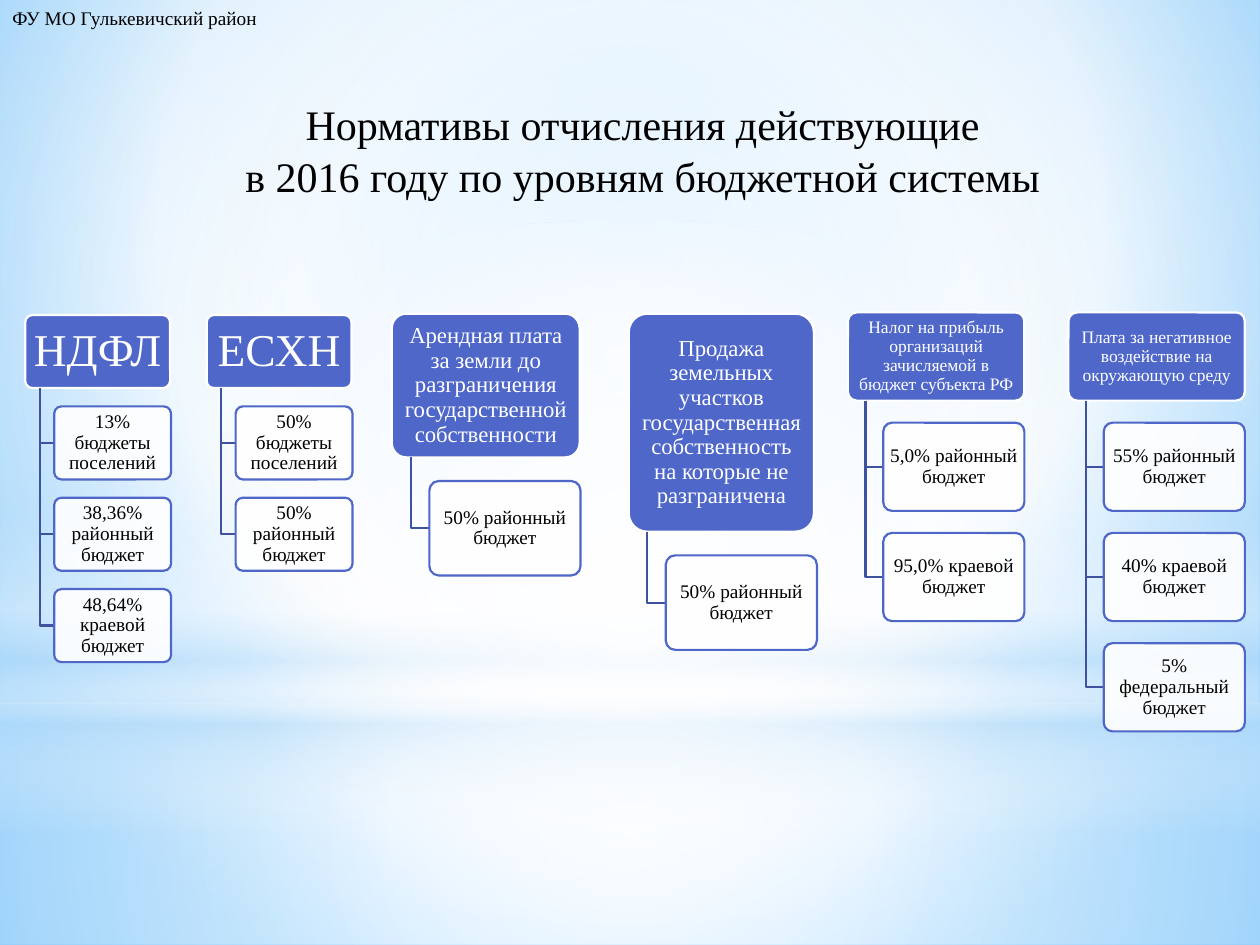
from lxml import etree
from pptx import Presentation
from pptx import util as u
from pptx.dml.color import RGBColor
from pptx.enum import shapes, text
from pptx.oxml.ns import qn

WHITE = RGBColor(0xFF, 0xFF, 0xFF)
BLACK = RGBColor(0x00, 0x00, 0x00)
INDIGO = RGBColor(0x4E, 0x67, 0xC8)
STEM_BLUE = RGBColor(0x3E, 0x52, 0xA0)
SKY = RGBColor(0x9E, 0xD5, 0xFF)
DEEP_SKY = RGBColor(0x5B, 0xB9, 0xFF)
PALE_SKY = RGBColor(0xB4, 0xDC, 0xFA)
FONT = "Times New Roman"
COLUMNS, ROWS = 100, 75
CENTRE = (50, 50, 50, 50)

# left, top, head width, head height, leaf height, head size, head, leaves
TAXES = [
    (2, 25, 11.5, 5.8, 5.8, 26, "НДФЛ",
     ["13% бюджеты поселений", "38,36% районный бюджет", "48,64% краевой бюджет"]),
    (16.4, 25, 11.5, 5.8, 5.8, 26, "ЕСХН",
     ["50% бюджеты поселений", "50% районный бюджет"]),
    (31.1, 24.9, 14.9, 11.4, 7.5, 13,
     "Арендная плата за земли до разграничения государственной собственности",
     ["50% районный бюджет"]),
    (49.9, 24.9, 14.7, 17.3, 7.5, 13,
     "Продажа земельных участков государственная собственность на которые не разграничена",
     ["50% районный бюджет"]),
    (67.3, 24.8, 14, 7, 7, 10,
     "Налог на прибыль организаций зачисляемой в бюджет субъекта РФ",
     ["5,0% районный бюджет", "95,0% краевой бюджет"]),
    (84.8, 24.8, 14, 7, 7, 10,
     "Плата за негативное воздействие на окружающую среду",
     ["55% районный бюджет", "40% краевой бюджет", "5% федеральный бюджет"]),
]


def cells(count):
    """Length of a number of grid cells, each a tenth of an inch."""
    return u.Inches(count / 10)


def box_of(left, top, width, height):
    return [cells(side) for side in (left, top, width, height)]


def set_alpha(colour, percent):
    etree.SubElement(colour, qn("a:alpha"), val=str(percent * 1000))


def set_gradient(fill, owner, stops, centre=None):
    """Fill with (position, colour, opacity) stops: round a centre, or downwards."""
    fill.solid()
    solid = next(owner.iter(qn("a:solidFill")))
    gradient = etree.Element(qn("a:gradFill"), rotWithShape="1")
    stop_list = etree.SubElement(gradient, qn("a:gsLst"))
    for position, colour, opacity in stops:
        stop = etree.SubElement(stop_list, qn("a:gs"), pos=str(position * 1000))
        set_alpha(etree.SubElement(stop, qn("a:srgbClr"), val=str(colour)), opacity)
    if centre:
        round_path = etree.SubElement(gradient, qn("a:path"), {"path": "circle"})
        edges = {edge: str(share * 1000) for edge, share in zip("ltrb", centre)}
        etree.SubElement(round_path, qn("a:fillToRect"), edges)
    else:
        etree.SubElement(gradient, qn("a:lin"), ang="5400000", scaled="0")
    solid.getparent().replace(solid, gradient)


def add_glow(slide, kind, box, stops, centre=None):
    glow = slide.shapes.add_shape(kind, *box_of(*box))
    glow.shadow.inherit = False
    glow.line.fill.background()
    set_gradient(glow.fill, glow._element.spPr, stops, centre)


def add_backdrop(slide):
    background = slide.background
    set_gradient(background.fill, slide._element,
                 [(0, SKY, 100), (60, WHITE, 100), (100, DEEP_SKY, 100)], (20, 10, 20, 60))
    rectangle, oval = shapes.MSO_SHAPE.RECTANGLE, shapes.MSO_SHAPE.OVAL
    horizon = 55.8
    add_glow(slide, rectangle, (0, horizon, COLUMNS, ROWS - horizon),
             [(0, WHITE, 91), (37, WHITE, 76), (100, PALE_SKY, 79)], CENTRE)
    add_glow(slide, rectangle, (0, 0, COLUMNS, horizon),
             [(0, WHITE, 89), (48, WHITE, 62), (100, PALE_SKY, 79)], CENTRE)
    add_glow(slide, rectangle, (0, 41.2, COLUMNS, 25),
             [(0, WHITE, 0), (29, WHITE, 30), (45, PALE_SKY, 40),
              (55, WHITE, 26), (65, PALE_SKY, 60), (100, WHITE, 0)])
    add_glow(slide, oval, (0, 17.5, COLUMNS, 55.8),
             [(0, WHITE, 100), (56, WHITE, 0)], CENTRE)


def write(paragraph, words, size, colour):
    run = paragraph.add_run()
    run.text = words
    run.font.size = u.Pt(size)
    run.font.name = FONT
    run.font.color.rgb = colour


def add_card(slide, box, words, size, colours, margins):
    """Rounded card; colours are fill, line and text."""
    fill, line, ink = colours
    card = slide.shapes.add_shape(shapes.MSO_SHAPE.ROUNDED_RECTANGLE, *box_of(*box))
    card.adjustments[0] = 0.1
    card.shadow.inherit = False
    card.fill.solid()
    card.fill.fore_color.rgb = fill
    card.line.color.rgb = line
    card.line.width = u.Pt(1.25)
    frame = card.text_frame
    frame.word_wrap = True
    frame.vertical_anchor = text.MSO_ANCHOR.MIDDLE
    side, edge = margins
    frame.margin_left = frame.margin_right = cells(side)
    frame.margin_top = frame.margin_bottom = cells(edge)
    paragraph = frame.paragraphs[0]
    paragraph.alignment = text.PP_ALIGN.CENTER
    paragraph.line_spacing = 0.9
    write(paragraph, words, size, ink)
    return card


def add_stem(slide, left, top, right, bottom):
    builder = slide.shapes.build_freeform(cells(left), cells(top))
    builder.add_line_segments([(cells(left), cells(bottom)), (cells(right), cells(bottom))],
                              close=False)
    stem = builder.convert_to_shape()
    stem.shadow.inherit = False
    stem.fill.background()
    stem.line.color.rgb = STEM_BLUE
    stem.line.width = u.Pt(1.25)


def add_tax(slide, box, leaf_height, head_size, head, leaves):
    """Tax card with the budget shares hanging below it."""
    left, top, width, height = box
    add_card(slide, box, head, head_size, (INDIGO, WHITE, WHITE),
             (head_size * 0.02, head_size * 0.015))
    bottom = top + height
    leaf_left = left + 0.2 * width
    for order, share in enumerate(leaves):
        leaf_top = bottom + leaf_height * (0.25 + 1.25 * order)
        add_stem(slide, left + 0.1 * width, bottom, leaf_left, leaf_top + leaf_height / 2)
        leaf = add_card(slide, (leaf_left, leaf_top, 1.6 * leaf_height, leaf_height),
                        share, 11, (WHITE, INDIGO, BLACK), (0.2, 0.2))
        set_alpha(next(leaf._element.spPr.iter(qn("a:srgbClr"))), 90)


def add_title(slide, box, lines):
    frame = slide.shapes.add_textbox(*box_of(*box)).text_frame
    frame.word_wrap = True
    paragraph = frame.paragraphs[0]
    paragraph.alignment = text.PP_ALIGN.CENTER
    paragraph.line_spacing = 1.05
    for order, line in enumerate(lines):
        if order:
            paragraph.add_line_break()
        write(paragraph, line, 24, BLACK)


def add_office(slide, box):
    frame = slide.shapes.add_textbox(*box_of(*box)).text_frame
    frame.word_wrap = False
    write(frame.paragraphs[0], "ФУ МО Гулькевичский район", 11, BLACK)


def main():
    deck = Presentation()
    deck.slide_width, deck.slide_height = cells(COLUMNS), cells(ROWS)
    slide = deck.slides.add_slide(deck.slide_layouts[6])
    add_backdrop(slide)
    add_title(slide, (15.4, 7.1, 71.2, 8.4),
              ["Нормативы отчисления действующие",
               "в 2016 году по уровням бюджетной системы"])
    for left, top, width, height, *content in TAXES:
        add_tax(slide, (left, top, width, height), *content)
    add_office(slide, (0, 0, 22.5, 2.9))
    deck.save("out.pptx")


if __name__ == "__main__":
    main()
